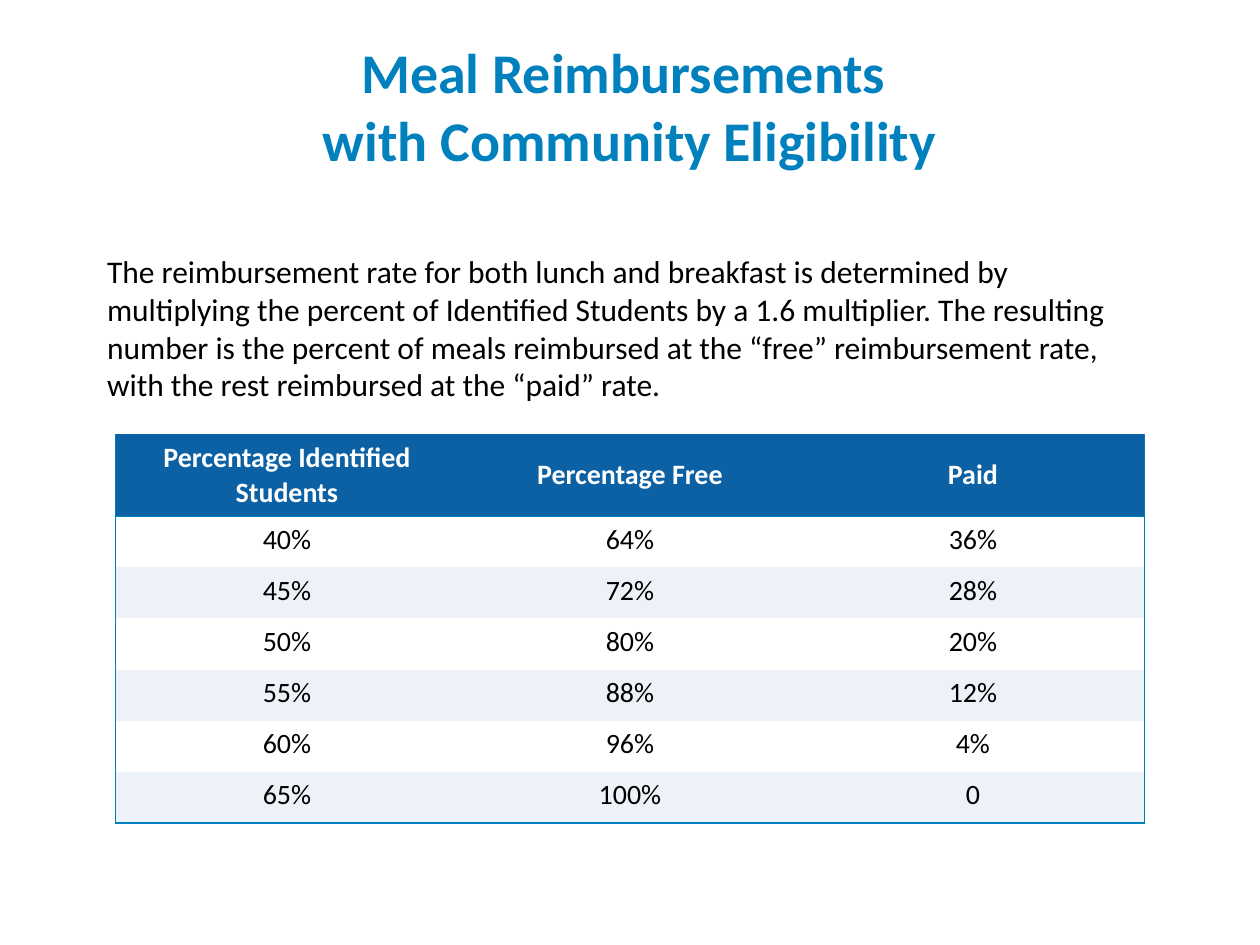
import pptx
import pptx.dml.color
import pptx.enum.text
import pptx.oxml
import pptx.oxml.ns
import pptx.util
from lxml import etree

Pt = pptx.util.Pt
ALIGN = pptx.enum.text.PP_ALIGN
ANCHOR = pptx.enum.text.MSO_ANCHOR

FONT = "Calibri"
BLUE, DARK_BLUE, PALE_BLUE = "0081BE", "0C61A4", "ECF2F8"
BLACK, WHITE = "000000", "FFFFFF"

TITLE_LINES = ["Meal Reimbursements ", "with Community Eligibility"]
EXPLANATION = (
    "The reimbursement rate for both lunch and breakfast is determined by "
    "multiplying the percent of Identified Students by a 1.6 multiplier. "
    "The resulting number is the percent of meals reimbursed at the “free” "
    "reimbursement rate, with the rest reimbursed at the “paid” rate."
)
RATES = [
    ["Percentage Identified Students", "Percentage Free", "Paid"],
    ["40%", "64%", "36%"],
    ["45%", "72%", "28%"],
    ["50%", "80%", "20%"],
    ["55%", "88%", "12%"],
    ["60%", "96%", "4%"],
    ["65%", "100%", "0"],
]


def color(value):
    return pptx.dml.color.RGBColor.from_string(value)


def add_run(paragraph, text, size, text_color, bold=False):
    run = paragraph.add_run()
    run.text = text
    run.font.name = FONT
    run.font.size = Pt(size)
    run.font.bold = bold
    run.font.color.rgb = color(text_color)


def place_text_frame(shape, left, top, width, height):
    """Move a placeholder into its box and return its top-anchored text frame."""
    shape.left, shape.top = Pt(left), Pt(top)
    shape.width, shape.height = Pt(width), Pt(height)
    frame = shape.text_frame
    frame.word_wrap = True
    frame.auto_size = pptx.enum.text.MSO_AUTO_SIZE.NONE
    frame.vertical_anchor = ANCHOR.TOP
    return frame


def fill_title(slide, left, top, width, height):
    frame = place_text_frame(slide.shapes.title, left, top, width, height)
    paragraph = frame.paragraphs[0]
    paragraph.alignment = ALIGN.CENTER
    for index, line in enumerate(TITLE_LINES):
        if index:
            paragraph.add_line_break()
        add_run(paragraph, line, 32, BLUE, bold=True)


def fill_explanation(slide, left, top, width, height):
    frame = place_text_frame(slide.placeholders[1], left, top, width, height)
    paragraph = frame.paragraphs[0]
    paragraph.space_before = Pt(0)
    properties = paragraph._p.get_or_add_pPr()
    properties.set("marL", "0")
    properties.set("indent", "0")
    etree.SubElement(properties, pptx.oxml.ns.qn("a:buNone"))
    add_run(paragraph, EXPLANATION, 18, BLACK)


def set_borders(cell, borders):
    """Draw the sides named in borders (side to colour) and clear the others."""
    properties = cell._tc.get_or_add_tcPr()
    for position, side in enumerate("LRTB"):
        if side in borders:
            paint = f'<a:solidFill><a:srgbClr val="{borders[side]}"/></a:solidFill>'
        else:
            paint = "<a:noFill/>"
        line = pptx.oxml.parse_xml(
            f'<a:ln{side} {pptx.oxml.ns.nsdecls("a")} w="{Pt(1)}">{paint}</a:ln{side}>'
        )
        properties.insert(position, line)


def fill_cell(cell, text, header, fill):
    cell.fill.solid()
    cell.fill.fore_color.rgb = color(fill)
    cell.vertical_anchor = ANCHOR.MIDDLE if header else ANCHOR.TOP
    paragraph = cell.text_frame.paragraphs[0]
    paragraph.alignment = ALIGN.CENTER
    add_run(paragraph, text, 16, WHITE if header else BLACK, bold=header)


def add_rate_table(slide, left, top, width, height, header_height=46.8):
    row_count, column_count = len(RATES), len(RATES[0])
    table = slide.shapes.add_table(
        row_count, column_count, Pt(left), Pt(top), Pt(width), Pt(height)
    ).table
    for column in table.columns:
        column.width = Pt(width / column_count)

    body_height = (height - header_height) / (row_count - 1)
    for row_index, values in enumerate(RATES):
        header = row_index == 0
        table.rows[row_index].height = Pt(header_height if header else body_height)
        fill = DARK_BLUE if header else (WHITE if row_index % 2 else PALE_BLUE)
        for column_index, text in enumerate(values):
            cell = table.cell(row_index, column_index)
            fill_cell(cell, text, header, fill)
            borders = {}
            if column_index == 0:
                borders["L"] = BLUE
            if column_index == column_count - 1:
                borders["R"] = BLUE
            if row_index <= 1:
                borders["T"] = DARK_BLUE if header else BLUE
            if row_index in (0, row_count - 1):
                borders["B"] = BLUE
            set_borders(cell, borders)


def main():
    presentation = pptx.Presentation()
    presentation.slide_width, presentation.slide_height = Pt(720), Pt(540)
    slide = presentation.slides.add_slide(presentation.slide_layouts[1])
    fill_title(slide, 54, 18, 612, 85)
    fill_explanation(slide, 54, 140.4, 612, 94.4)
    add_rate_table(slide, 66, 248.2, 588, 222)
    presentation.save("out.pptx")


if __name__ == "__main__":
    main()
